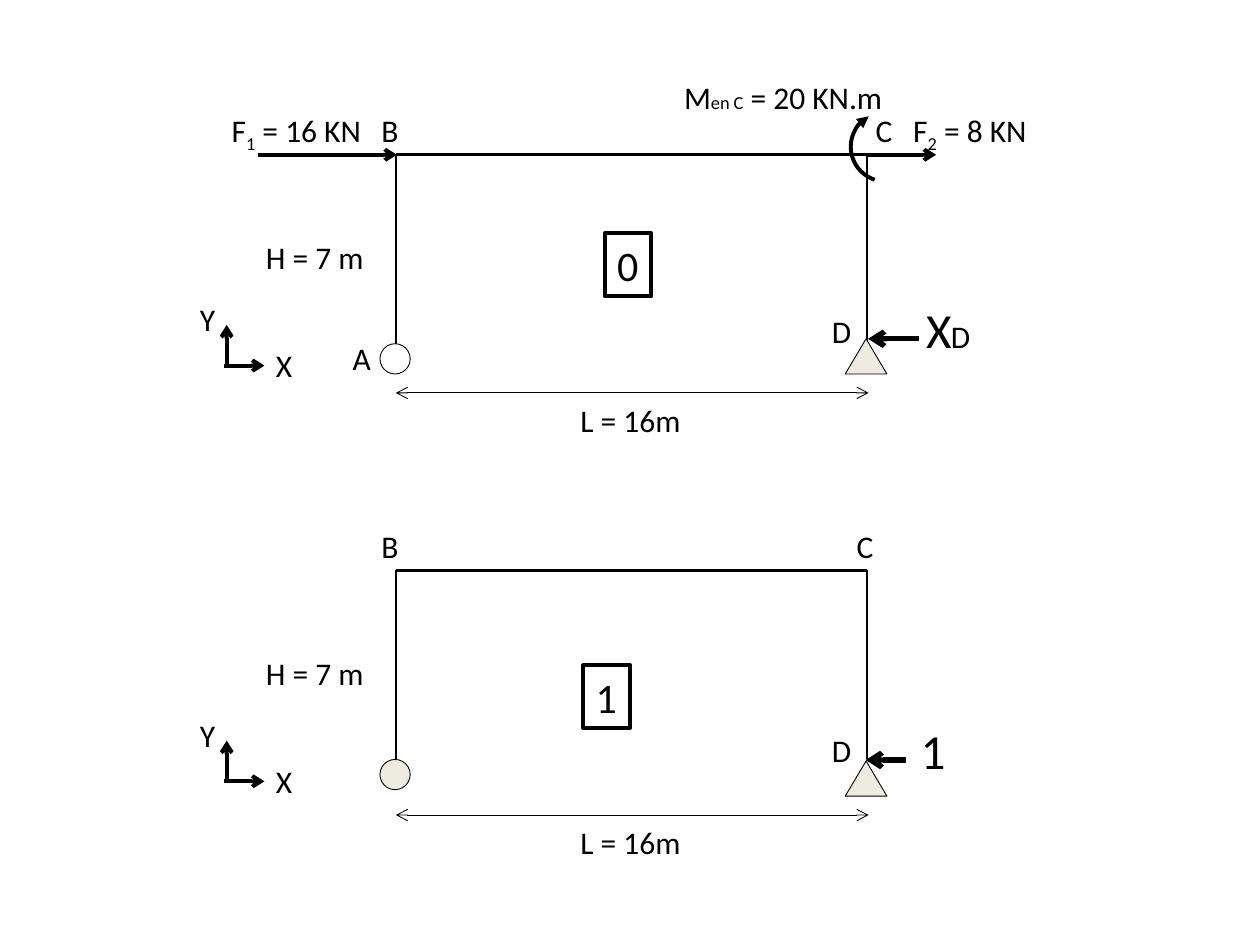
import pptx
import pptx.util
import pptx.dml.color
import pptx.enum.shapes
import pptx.enum.text
import pptx.oxml
import pptx.oxml.ns

Cm, Pt = pptx.util.Cm, pptx.util.Pt
SHAPE = pptx.enum.shapes.MSO_SHAPE
BLACK = pptx.dml.color.RGBColor(0x00, 0x00, 0x00)
SUPPORT = pptx.dml.color.RGBColor(0xEE, 0xEC, 0xE1)
FONT = "Calibri"
LEFT, RIGHT, TOP, FOOT = 7.98, 17.48, 3.12, 6.93
LOWER, LOWER_GROUND = 8.38, 8.51


def add_end(s, tag, kind):
    """Put an arrowhead on one end of an outline."""
    end = pptx.oxml.parse_xml(f'<a:{tag} {pptx.oxml.ns.nsdecls("a")} type="{kind}"/>')
    s.line._get_or_add_ln().append(end)


def set_line(s, width):
    """Give a shape or connector a black outline."""
    s.line.color.rgb = BLACK
    s.line.width = Pt(width)


def add_line(slide, x1, y1, x2, y2, width=1.5, head=None, tail=None):
    """Draw a straight line with optional arrowheads."""
    s = slide.shapes.add_connector(
        pptx.enum.shapes.MSO_CONNECTOR.STRAIGHT, Cm(x1), Cm(y1), Cm(x2), Cm(y2))
    set_line(s, width)
    s._element.spPr.append(
        pptx.oxml.parse_xml(f'<a:effectLst {pptx.oxml.ns.nsdecls("a")}/>'))
    for tag, kind in (("headEnd", head), ("tailEnd", tail)):
        if kind:
            add_end(s, tag, kind)


def add_text(slide, x, y, w, runs, size=18, h=1.02):
    """Add a one-line label; runs hold text and optional size and baseline."""
    s = slide.shapes.add_textbox(Cm(x), Cm(y), Cm(w), Cm(h))
    tf = s.text_frame
    tf.word_wrap = False
    tf.auto_size = pptx.enum.text.MSO_AUTO_SIZE.SHAPE_TO_FIT_TEXT
    p = tf.paragraphs[0]
    p.font.name, p.font.size, p.font.color.rgb = FONT, Pt(size), BLACK
    for text, run_size, baseline in runs:
        r = p.add_run()
        r.text = text
        if run_size:
            r.font.size = Pt(run_size)
        if baseline:
            r.font._element.set("baseline", str(baseline))
    return s


def add_label(slide, x, y, w, text, size=18, h=1.02):
    """Add a label in a single style."""
    return add_text(slide, x, y, w, [(text, None, None)], size, h)


def add_case_number(slide, x, y, text):
    """Add the framed number of a load case."""
    set_line(add_label(slide, x, y, 0.94, text, 24, 1.27), 2.25)


def add_solid(slide, kind, x, y, w, h, fill=None, width=0.5):
    """Add an outlined shape, filled or empty."""
    s = slide.shapes.add_shape(kind, Cm(x), Cm(y), Cm(w), Cm(h))
    s.shadow.inherit = False
    if fill is None:
        s.fill.background()
    else:
        s.fill.solid()
        s.fill.fore_color.rgb = fill
    set_line(s, width)
    return s


def add_axes(slide, dy):
    """Draw the X and Y axes."""
    add_line(slide, 4.57, 7.39 + dy, 4.57, 6.55 + dy, 2.25, tail="arrow")
    add_line(slide, 4.52, 7.37 + dy, 5.33, 7.37 + dy, 2.25, tail="arrow")
    add_label(slide, 3.78, 5.92 + dy, 0.81, "Y")
    add_label(slide, 5.31, 6.86 + dy, 0.84, "X")


def add_frame(slide, dy, ground, roller_fill, c_x):
    """Draw a portal frame with its supports, joints, spans and axes."""
    add_solid(slide, SHAPE.OVAL, 7.66, FOOT + dy, 0.61, 0.61, roller_fill)
    for x in (LEFT, RIGHT):
        add_line(slide, x, FOOT + dy, x, TOP + dy)
    add_line(slide, LEFT, TOP + dy, RIGHT, TOP + dy)
    add_solid(slide, SHAPE.ISOSCELES_TRIANGLE, 17.04, 6.83 + ground, 0.84, 0.71, SUPPORT)
    add_label(slide, 7.44, 2.11 + dy, 0.86, "B")
    add_label(slide, c_x, 2.11 + dy, 0.86, "C")
    add_label(slide, 16.52, 6.17 + (dy + ground) / 2, 0.91, "D")
    add_label(slide, 5.11, 4.67 + dy, 2.51, "H = 7 m")
    add_label(slide, 11.45, 7.95 + ground, 2.57, "L = 16m")
    add_line(slide, LEFT, 7.92 + ground, 17.51, 7.92 + ground, 0.5, "arrow", "arrow")
    add_axes(slide, dy)


def add_moment(slide):
    """Draw the curved moment arrow at joint C."""
    s = add_solid(slide, SHAPE.ARC, 17.15, 2.26, 1.4, 1.4, width=2.25)
    s.adjustments[0], s.adjustments[1] = 179.22, 43.18
    s.rotation = 180
    s._element.spPr.xfrm.set("flipV", "1")
    add_end(s, "headEnd", "triangle")


def add_loads(slide):
    """Draw the forces and the moment on the upper frame."""
    add_line(slide, 5.21, TOP, 8, TOP, 2.25, tail="arrow")
    add_line(slide, RIGHT, TOP, 18.87, TOP, 2.25, tail="arrow")
    add_moment(slide)
    add_text(slide, 13.54, 1.45, 4.57,
             [("M", None, None), ("en C", 10.5, None), (" = 20 KN.m", None, None)])
    for x, w, index, value in ((4.42, 3.18, "1", "16"), (18.16, 2.87, "2", "8")):
        add_text(slide, x, 2.11, w,
                 [("F", None, None), (index, None, -25000), (f" = {value} KN", None, None)])


def main():
    """Build the slide with both load cases."""
    prs = pptx.Presentation()
    prs.slide_width, prs.slide_height = Cm(25.4), Cm(19.05)
    slide = prs.slides.add_slide(prs.slide_layouts[6])

    add_frame(slide, 0, 0, None, 17.4)
    add_loads(slide)
    add_label(slide, 6.86, 6.71, 0.89, "A")
    add_case_number(slide, 12.19, 4.7, "0")
    add_line(slide, 18.52, 6.83, 17.5, 6.83, 3, tail="arrow")
    add_label(slide, 18.42, 5.92, 1.04, "X", 28, 1.45)
    add_label(slide, 18.92, 6.27, 0.91, "D")

    add_frame(slide, LOWER, LOWER_GROUND, SUPPORT, 17.02)
    add_case_number(slide, 11.76, 13.41, "1")
    add_line(slide, 18.26, 15.32, 17.45, 15.32, 3, tail="arrow")
    add_label(slide, 18.31, 14.4, 1.04, "1", 28, 1.45)

    prs.save("out.pptx")


if __name__ == "__main__":
    main()
